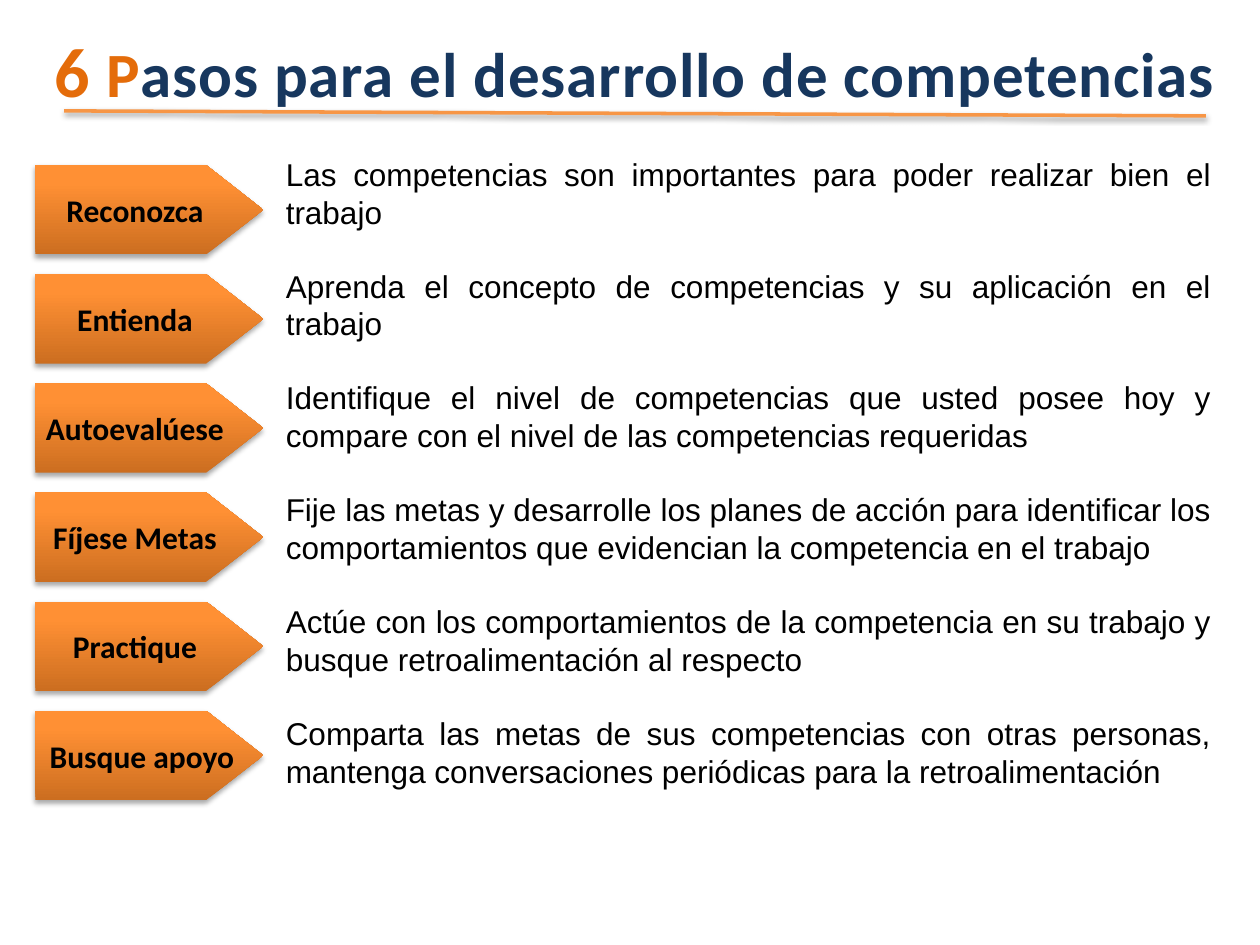
from copy import deepcopy

from pptx import Presentation
from pptx.dml.color import RGBColor
from pptx.enum.shapes import MSO_CONNECTOR, MSO_SHAPE
from pptx.enum.text import MSO_ANCHOR, MSO_AUTO_SIZE, PP_ALIGN
from pptx.oxml import parse_xml
from pptx.oxml.ns import nsdecls
from pptx.util import Inches, Pt

PENTAGON, STRAIGHT = MSO_SHAPE.PENTAGON, MSO_CONNECTOR.STRAIGHT
CENTER, JUSTIFY = PP_ALIGN.CENTER, PP_ALIGN.JUSTIFY
MIDDLE, GROW = MSO_ANCHOR.MIDDLE, MSO_AUTO_SIZE.SHAPE_TO_FIT_TEXT

BLACK = RGBColor(0x00, 0x00, 0x00)
NAVY = RGBColor(0x17, 0x37, 0x5E)
ORANGE = RGBColor(0xE4, 0x6C, 0x0A)
RULE_ORANGE = RGBColor(0xF7, 0x96, 0x46)
GRADIENT = [(0, RGBColor(0xCC, 0x6E, 0x20)), (0.8, RGBColor(0xFF, 0x90, 0x34)),
            (1, RGBColor(0xFF, 0x91, 0x36))]

TITLE = [("6", 40, ORANGE), (" ", 36, NAVY), ("P", 36, ORANGE),
         ("asos para el desarrollo de competencias", 36, NAVY)]
STEPS = [
    ("Reconozca", "Las competencias son importantes para poder realizar bien el trabajo"),
    ("Entienda", "Aprenda el concepto de competencias y su aplicación en el trabajo"),
    ("Autoevalúese", "Identifique el nivel de competencias que usted posee hoy y "
     "compare con el nivel de las competencias requeridas"),
    ("Fíjese Metas", "Fije las metas y desarrolle los planes de acción para identificar "
     "los comportamientos que evidencian la competencia en el trabajo"),
    ("Practique", "Actúe con los comportamientos de la competencia en su trabajo y "
     "busque retroalimentación al respecto"),
    ("Busque apoyo", "Comparta las metas de sus competencias con otras personas, "
     "mantenga conversaciones periódicas para la retroalimentación"),
]
LABEL_FORMAT = {"name": "Calibri", "size": Pt(18), "bold": True}
BODY_FORMAT = {"name": "Arial", "size": Pt(18), "bold": False}


def add_span(para, text, font_format, color):
    span = para.add_run()
    span.text = text
    for name, value in font_format.items():
        setattr(span.font, name, value)
    span.font.color.rgb = color
    return span


def add_shadow(item, distance, opacity):
    item._element.spPr.append(parse_xml(
        f'<a:effectLst {nsdecls("a")}><a:outerShdw blurRad="{Pt(3.1)}" '
        f'dist="{Pt(distance)}" dir="5400000" rotWithShape="0"><a:srgbClr val="000000">'
        f'<a:alpha val="{opacity * 1000}"/></a:srgbClr></a:outerShdw></a:effectLst>'))


deck = Presentation()
deck.slide_width, deck.slide_height = Inches(10), Inches(7.5)
page = deck.slides.add_slide(deck.slide_layouts[6])

# Step descriptions
box = page.shapes.add_textbox(Inches(2.17), Inches(1.18), Inches(7.54), Inches(5.25))
frame = box.text_frame
frame.word_wrap, frame.auto_size = True, GROW
for index, (label, description) in enumerate(STEPS):
    para = frame.add_paragraph() if index else frame.paragraphs[0]
    para.alignment = JUSTIFY
    if index:
        para.space_before = Pt(20.7)
    add_span(para, description, BODY_FORMAT, BLACK)

# Step arrows, evenly spaced
first_top, last_top = 1.31, 5.64
pitch = (last_top - first_top) / (len(STEPS) - 1)
for index, (label, description) in enumerate(STEPS):
    arrow = page.shapes.add_shape(PENTAGON, Inches(0.28), Inches(first_top + index * pitch),
                                  Inches(1.81), Inches(0.71))
    arrow.adjustments[0] = 0.64
    arrow.fill.gradient()
    arrow.fill.gradient_angle = 90
    stop_list = arrow._element.spPr.xpath(".//a:gsLst")[0]
    stop_list.append(deepcopy(stop_list[-1]))
    for stop, (position, color) in zip(arrow.fill.gradient_stops, GRADIENT):
        stop.position = position
        stop.color.rgb = color
    arrow.line.fill.background()
    add_shadow(arrow, 1.8, 35)
    frame = arrow.text_frame
    frame.word_wrap, frame.vertical_anchor = False, MIDDLE
    if label == "Busque apoyo":
        frame.margin_left = Inches(0.21)
    para = frame.paragraphs[0]
    para.alignment = CENTER
    add_span(para, label, LABEL_FORMAT, BLACK)

# Title
box = page.shapes.add_textbox(Inches(0.21), Inches(0.17), Inches(9.67), Inches(0.77))
frame = box.text_frame
frame.word_wrap, frame.auto_size = True, GROW
para = frame.paragraphs[0]
para.alignment = CENTER
for text, size, color in TITLE:
    span = add_span(para, text, {**LABEL_FORMAT, "size": Pt(size)}, color)
    span.font._element.set("spc", "50")

# Rule under the title
rule = page.shapes.add_connector(STRAIGHT, Inches(0.51), Inches(0.88),
                                 Inches(9.57), Inches(0.92))
rule.line.color.rgb = RULE_ORANGE
rule.line.width = Pt(2)
add_shadow(rule, 1.6, 38)

deck.save("out.pptx")
